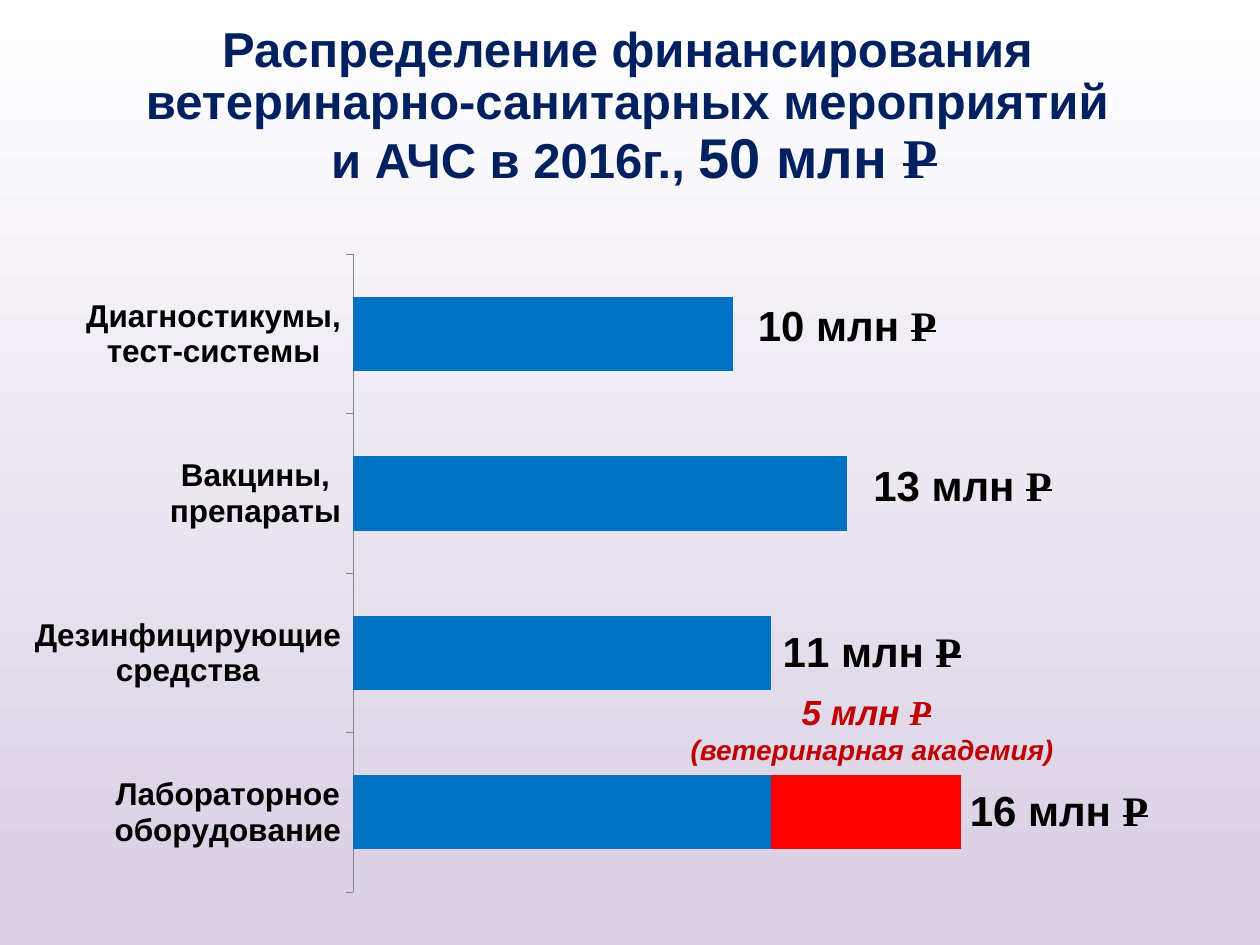
from pptx import Presentation
from pptx.chart import data
from pptx.dml.color import RGBColor
from pptx.enum import chart as ch, shapes, text
from pptx.oxml import parse_xml
from pptx.oxml.ns import qn
from pptx.util import Cm, Pt


def rgb(code):
    return RGBColor.from_string(code)


def add(par, words, size, tone, face="Arial", ital=None):
    run = par.add_run()
    run.text = words
    font = run.font
    font.size, font.name, font.bold, font.italic = Pt(size), face, True, ital
    font.color.rgb = rgb(tone)
    if words == "Р":  # a struck letter stands for the rouble sign
        font.name = "Times New Roman"
        font._element.set("strike", "sngStrike")


prs = Presentation()
prs.slide_width, prs.slide_height = Cm(25.4), Cm(19.05)
slide = prs.slides.add_slide(prs.slide_layouts[5])

# Gradient backdrop, behind everything
back = slide.shapes.add_shape(shapes.MSO_SHAPE.RECTANGLE, 0, 0,
                              prs.slide_width, prs.slide_height)
back.shadow.inherit = False
back.line.fill.background()
back.fill.gradient()
back.fill.gradient_angle = 90
for stop, tone in zip(back.fill.gradient_stops, ("D8CFE3", "FFFFFF")):
    stop.color.rgb = rgb(tone)
tree = back.element.getparent()
tree.insert(2, back.element)

# Title
title = slide.shapes.title
title.left, title.top, title.width, title.height = Cm(0.48), Cm(0.08), Cm(24.61), Cm(4.19)
frame = title.text_frame
frame.vertical_anchor = text.MSO_ANCHOR.MIDDLE
par = frame.paragraphs[0]
par.alignment = text.PP_ALIGN.CENTER
par.line_spacing = 0.9
for line in ("Распределение финансирования ", "ветеринарно-санитарных мероприятий "):
    add(par, line, 28, "002060")
    par.add_line_break()
add(par, "и АЧС в 2016г., ", 28, "002060")
add(par, "50 млн ", 32, "002060")
add(par, "Р", 32, "002060")

# Stacked bar chart
info = data.CategoryChartData()
info.categories = ["Лабораторное оборудование", "Дезинфицирующие средства",
                   "Вакцины, препараты", "Диагностикумы, тест-системы"]
info.add_series("Series 1", (11, 11, 13, 10))
info.add_series("Series 2", (5, 0, 0, 0))
chart = slide.shapes.add_chart(ch.XL_CHART_TYPE.BAR_STACKED, Cm(0.7), Cm(4.72),
                               Cm(23.6), Cm(13.59), info).chart
chart.has_legend = chart.has_title = False
chart.font.name, chart.font.size = "Calibri", Pt(10)
chart.font.color.rgb = rgb("000000")
plot = chart.plots[0]
plot.gap_width, plot.overlap, plot.vary_by_categories = 115, 100, False
for bar, tone in zip(plot.series, ("0070C0", "FF0000")):
    bar.format.fill.solid()
    bar.format.fill.fore_color.rgb = rgb(tone)

# Axes
axis = chart.category_axis
axis.major_tick_mark = ch.XL_TICK_MARK.OUTSIDE
axis.format.line.color.rgb = rgb("868686")
axis.format.line.width = Pt(0.25)
font = axis.tick_labels.font
font.name, font.size, font.bold = "Arial", Pt(18), True
font.color.rgb = rgb("000000")
scale = chart.value_axis
scale.visible = scale.has_major_gridlines = False
scale.minimum_scale, scale.maximum_scale = 0, 18

# Fixed plot area
C_NS = "http://schemas.openxmlformats.org/drawingml/2006/chart"
area = chart._chartSpace.find(".//" + qn("c:plotArea"))
for old in area.findall(qn("c:layout")):
    area.remove(old)
area.insert(0, parse_xml(
    f'<c:layout xmlns:c="{C_NS}"><c:manualLayout><c:layoutTarget val="inner"/>'
    '<c:xMode val="edge"/><c:yMode val="edge"/><c:x val="0.271"/><c:y val="0.03"/>'
    '<c:w val="0.585"/><c:h val="0.946"/></c:manualLayout></c:layout>'))

# Totals, shifted from the bar centres to the right of the bars
main = plot.series[0]
tags = main.data_labels
tags.show_value = True
tags.font.name, tags.font.size, tags.font.bold = "Arial", Pt(24), True
sums = [(16, 0.43, 0, " "), (11, 0.27, 0, " "), (13, 0.31, -0.01, ""), (10, 0.26, -0.01, "")]
for i, (total, dx, dy, end) in enumerate(sums):
    frame = main.points[i].data_label.text_frame
    frame.word_wrap = False
    for words in (f"{total} млн ", "Р", end):
        if words:
            add(frame.paragraphs[0], words, 24, "000000")
    node = main._element.findall(".//" + qn("c:dLbl"))[i]
    node.insert(1, parse_xml(
        f'<c:layout xmlns:c="{C_NS}"><c:manualLayout><c:x val="{dx}"/>'
        f'<c:y val="{dy}"/></c:manualLayout></c:layout>'))

# No leader lines between bars and totals
group = main._element.find(qn("c:dLbls"))
for old in group.findall(qn("c:showLeaderLines")):
    old.set("val", "0")
group.append(parse_xml(
    f'<c:extLst xmlns:c="{C_NS}"><c:ext uri="{{CE6537A1-D6FC-4f65-9D91-7224C49458BB}}" '
    'xmlns:c15="http://schemas.microsoft.com/office/drawing/2012/chart">'
    '<c15:showLeaderLines val="0"/></c:ext></c:extLst>'))

# Note on the red part
note = slide.shapes.add_textbox(Cm(13.62), Cm(13.79), Cm(8.08), Cm(1.8))
frame = note.text_frame
frame.word_wrap = False
frame.auto_size = text.MSO_AUTO_SIZE.SHAPE_TO_FIT_TEXT
top, low = frame.paragraphs[0], frame.add_paragraph()
top.alignment = low.alignment = text.PP_ALIGN.CENTER
for words in ("5 млн ", "Р", "  "):
    add(top, words, 20, "C00000", ital=True)
add(low, "(ветеринарная академия) ", 16, "C00000", ital=True)

prs.save("out.pptx")
